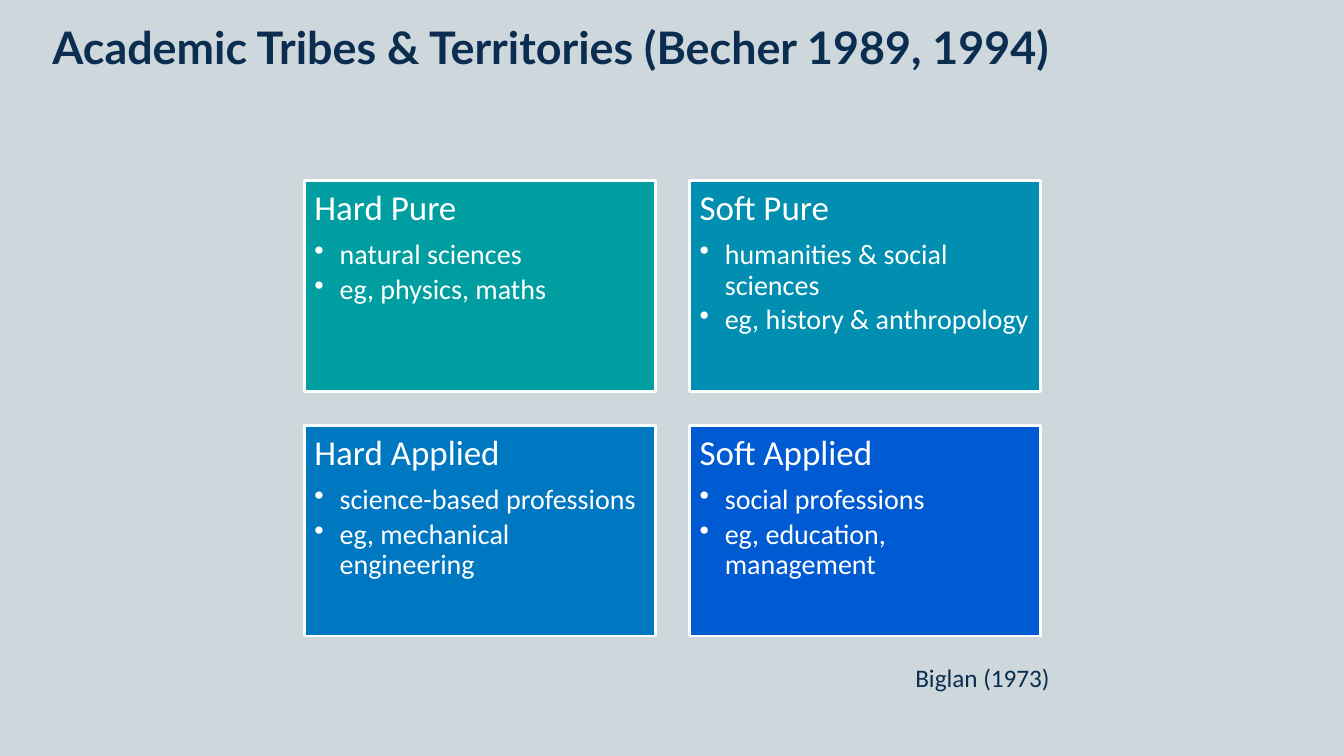
from dataclasses import dataclass

from lxml import etree
from pptx import Presentation
from pptx.dml.color import RGBColor
from pptx.enum.shapes import MSO_SHAPE
from pptx.enum.text import MSO_ANCHOR, PP_ALIGN
from pptx.oxml.ns import qn
from pptx.slide import Slide
from pptx.util import Inches, Pt

RECTANGLE = MSO_SHAPE.RECTANGLE
TOP = MSO_ANCHOR.TOP
LEFT = PP_ALIGN.LEFT

BACKGROUND = RGBColor(0xCD, 0xD7, 0xDC)
NAVY = RGBColor(0x0A, 0x2D, 0x50)
WHITE = RGBColor(0xFF, 0xFF, 0xFF)
TEAL = RGBColor(0x00, 0x9E, 0xA0)
CYAN = RGBColor(0x00, 0x8E, 0xB1)
AZURE = RGBColor(0x00, 0x77, 0xC1)
BLUE = RGBColor(0x00, 0x5A, 0xD2)

GRID_LEFT, GRID_TOP = 3.02, 1.79
CARD_WIDTH, CARD_HEIGHT = 3.48, 2.09
COLUMN_STEP, ROW_STEP = 3.82, 2.43


@dataclass(frozen=True)
class Territory:
    name: str
    traits: tuple[str, ...]
    color: RGBColor


TERRITORIES = (
    Territory("Hard Pure", ("natural sciences", "eg, physics, maths"), TEAL),
    Territory("Soft Pure",
              ("humanities & social sciences", "eg, history & anthropology"), CYAN),
    Territory("Hard Applied",
              ("science-based professions", "eg, mechanical engineering"), AZURE),
    Territory("Soft Applied",
              ("social professions", "eg, education, management"), BLUE),
)


def write(paragraph, text: str, size: float, color: RGBColor,
          name: str = "Calibri", bold: bool = False) -> None:
    span = paragraph.add_run()
    span.text = text
    span.font.color.rgb = color
    for key, value in {"size": Pt(size), "name": name, "bold": bold}.items():
        setattr(span.font, key, value)


def set_frame(frame, inset_x: float, inset_y: float) -> None:
    settings = {
        "word_wrap": True, "vertical_anchor": TOP,
        "margin_left": Inches(inset_x), "margin_right": Inches(inset_x),
        "margin_top": Inches(inset_y), "margin_bottom": Inches(inset_y),
    }
    for key, value in settings.items():
        setattr(frame, key, value)


def add_bullet(paragraph) -> None:
    paragraph.level = 1
    properties = paragraph._p.get_or_add_pPr()
    properties.set("marL", str(Inches(0.25)))
    properties.set("indent", str(Inches(-0.25)))
    etree.SubElement(properties, qn("a:buChar")).set("char", "•")


def draw_territory(page: Slide, territory: Territory, left: float, top: float) -> None:
    box = page.shapes.add_shape(RECTANGLE, Inches(left), Inches(top),
                                Inches(CARD_WIDTH), Inches(CARD_HEIGHT))
    box.shadow.inherit = False
    box.fill.solid()
    box.fill.fore_color.rgb = territory.color
    box.line.color.rgb = WHITE
    box.line.width = Pt(2)
    frame = box.text_frame
    set_frame(frame, 0.1, 0.1)

    for index, text in enumerate((territory.name, *territory.traits)):
        is_heading = index == 0
        para = frame.paragraphs[0] if is_heading else frame.add_paragraph()
        spacing = {"alignment": LEFT, "line_spacing": 0.9,
                   "space_after": Pt(8.75 if is_heading else 3)}
        for key, value in spacing.items():
            setattr(para, key, value)
        if not is_heading:
            add_bullet(para)
        write(para, text, 25 if is_heading else 20, WHITE)


def main() -> None:
    deck = Presentation()
    deck.slide_width, deck.slide_height = Inches(13.33), Inches(7.5)
    page = deck.slides.add_slide(deck.slide_layouts.get_by_name("Title Only"))
    page.background.fill.solid()
    page.background.fill.fore_color.rgb = BACKGROUND

    # Title
    title = page.shapes.title
    title.left, title.top = Inches(0.52), Inches(0.2)
    title.width, title.height = Inches(12.28), Inches(0.79)
    set_frame(title.text_frame, 0, 0)
    heading = title.text_frame.paragraphs[0]
    heading.alignment = LEFT
    write(heading, "Academic Tribes & Territories (Becher 1989, 1994)",
          32, NAVY, "Lato", True)

    # Two-by-two grid of territories
    for index, territory in enumerate(TERRITORIES):
        row, column = divmod(index, 2)
        draw_territory(page, territory, GRID_LEFT + column * COLUMN_STEP,
                       GRID_TOP + row * ROW_STEP)

    # Source note
    note = page.shapes.add_textbox(Inches(8.98), Inches(6.52), Inches(2.74), Inches(0.53))
    set_frame(note.text_frame, 0.1, 0.05)
    write(note.text_frame.paragraphs[0], "Biglan (1973)", 18, NAVY)

    deck.save("out.pptx")


if __name__ == "__main__":
    main()
